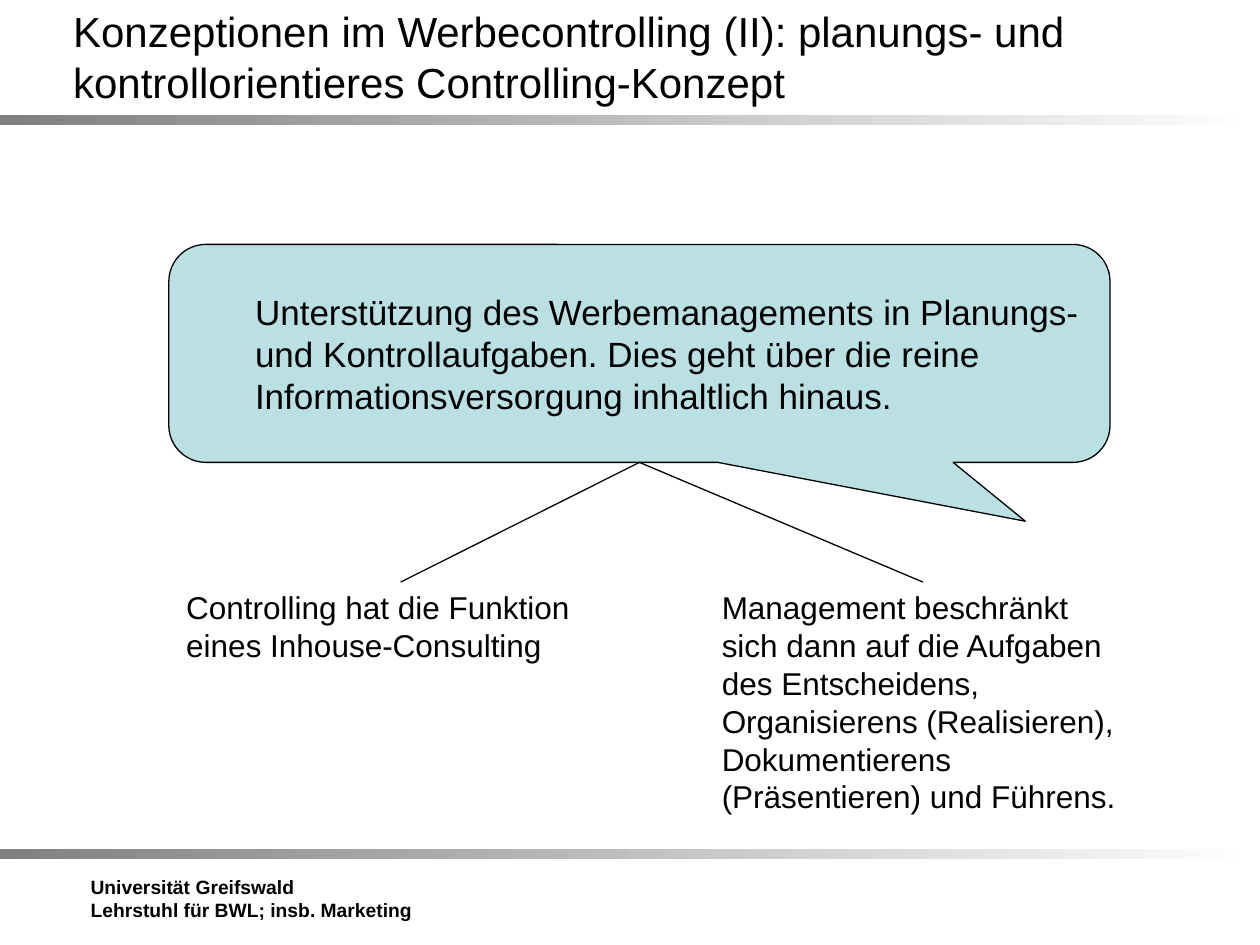
import pptx
import pptx.util
import pptx.dml.color
import pptx.enum.shapes
import pptx.enum.text
import pptx.oxml.ns
from lxml import etree

Inches = pptx.util.Inches
Pt = pptx.util.Pt
ANCHOR = pptx.enum.text.MSO_ANCHOR
SHAPE = pptx.enum.shapes.MSO_SHAPE
COLORS = {"text": "000000", "line": "000000", "callout": "BBE0E3",
          "bar_start": "808080", "bar_end": "FFFFFF"}


def color(name):
    return pptx.dml.color.RGBColor.from_string(COLORS[name])


def write(shape, lines, size, anchor=ANCHOR.TOP, bold=False):
    frame = shape.text_frame
    frame_format = {"word_wrap": True, "vertical_anchor": anchor,
                    "auto_size": pptx.enum.text.MSO_AUTO_SIZE.NONE}
    for key, value in frame_format.items():
        setattr(frame, key, value)
    frame.text = "\n".join(lines)
    font_format = {"name": "Arial", "size": Pt(size), "bold": bold}
    for paragraph in frame.paragraphs:
        paragraph.alignment = pptx.enum.text.PP_ALIGN.LEFT
        for key, value in font_format.items():
            setattr(paragraph.font, key, value)
        paragraph.font.color.rgb = color("text")


presentation = pptx.Presentation()
presentation.slide_width = Inches(10)
presentation.slide_height = Inches(7.5)
slide = presentation.slides.add_slide(presentation.slide_layouts[5])
shapes = slide.shapes

# Gradient bars below the title and above the footer
for top in (0.91, 6.74):
    bar = shapes.add_shape(SHAPE.RECTANGLE, Inches(0), Inches(top), Inches(10), Inches(0.08))
    bar.shadow.inherit = False
    bar.line.fill.background()
    bar.fill.gradient()
    bar.fill.gradient_angle = 0
    for stop, name, position in zip(bar.fill.gradient_stops, ("bar_start", "bar_end"), (0, 1)):
        stop.color.rgb = color(name)
        stop.position = position

# Footer
footer = shapes.add_textbox(Inches(0.62), Inches(6.9), Inches(2.91), Inches(0.59))
write(footer, ["Universität Greifswald", "Lehrstuhl für BWL; insb. Marketing"], 11, bold=True)

# Title
title = shapes.title
title_place = {"left": 0.48, "top": 0.13, "width": 9, "height": 0.63}
for key, value in title_place.items():
    setattr(title, key, Inches(value))
write(title, ["Konzeptionen im Werbecontrolling (II): planungs- und "
              "kontrollorientieres Controlling-Konzept"], 24, ANCHOR.MIDDLE)

# Callout with the core idea
concept = shapes.add_shape(SHAPE.ROUNDED_RECTANGULAR_CALLOUT,
                           Inches(1.34), Inches(1.94), Inches(7.47), Inches(1.73))
for index, value in enumerate((0.41, 0.77, 0.17)):
    concept.adjustments[index] = value
concept.shadow.inherit = False
concept.fill.solid()
concept.fill.fore_color.rgb = color("callout")
concept.line.color.rgb = color("line")
concept.line.width = Pt(0.75)
write(concept, ["Unterstützung des Werbemanagements in Planungs- und Kontrollaufgaben. "
                "Dies geht über die reine Informationsversorgung inhaltlich hinaus."],
      20, ANCHOR.MIDDLE)
concept_paragraph = concept.text_frame.paragraphs[0]
concept_paragraph.level = 1
indent = concept_paragraph._p.get_or_add_pPr()
indent.set("marL", str(Inches(0.5)))
indent.set("indent", "0")

# Consequences, each joined to the callout
consequences = [
    (1.38, 3.6, 0.71, "Controlling hat die Funktion eines Inhouse-Consulting"),
    (5.63, 3.39, 1.92, "Management beschränkt sich dann auf die Aufgaben des Entscheidens, "
     "Organisierens (Realisieren), Dokumentierens (Präsentieren) und Führens."),
]
for left, width, height, wording in consequences:
    consequence = shapes.add_textbox(Inches(left), Inches(4.62), Inches(width), Inches(height))
    write(consequence, [wording], 18)
    branch = shapes.add_connector(pptx.enum.shapes.MSO_CONNECTOR.STRAIGHT, 0, 0, 0, 0)
    branch.begin_connect(concept, 2)
    branch.end_connect(consequence, 0)
    branch.line.color.rgb = color("line")
    branch.line.width = Pt(0.75)
    etree.SubElement(branch._element.spPr, pptx.oxml.ns.qn("a:effectLst"))

presentation.save("out.pptx")
